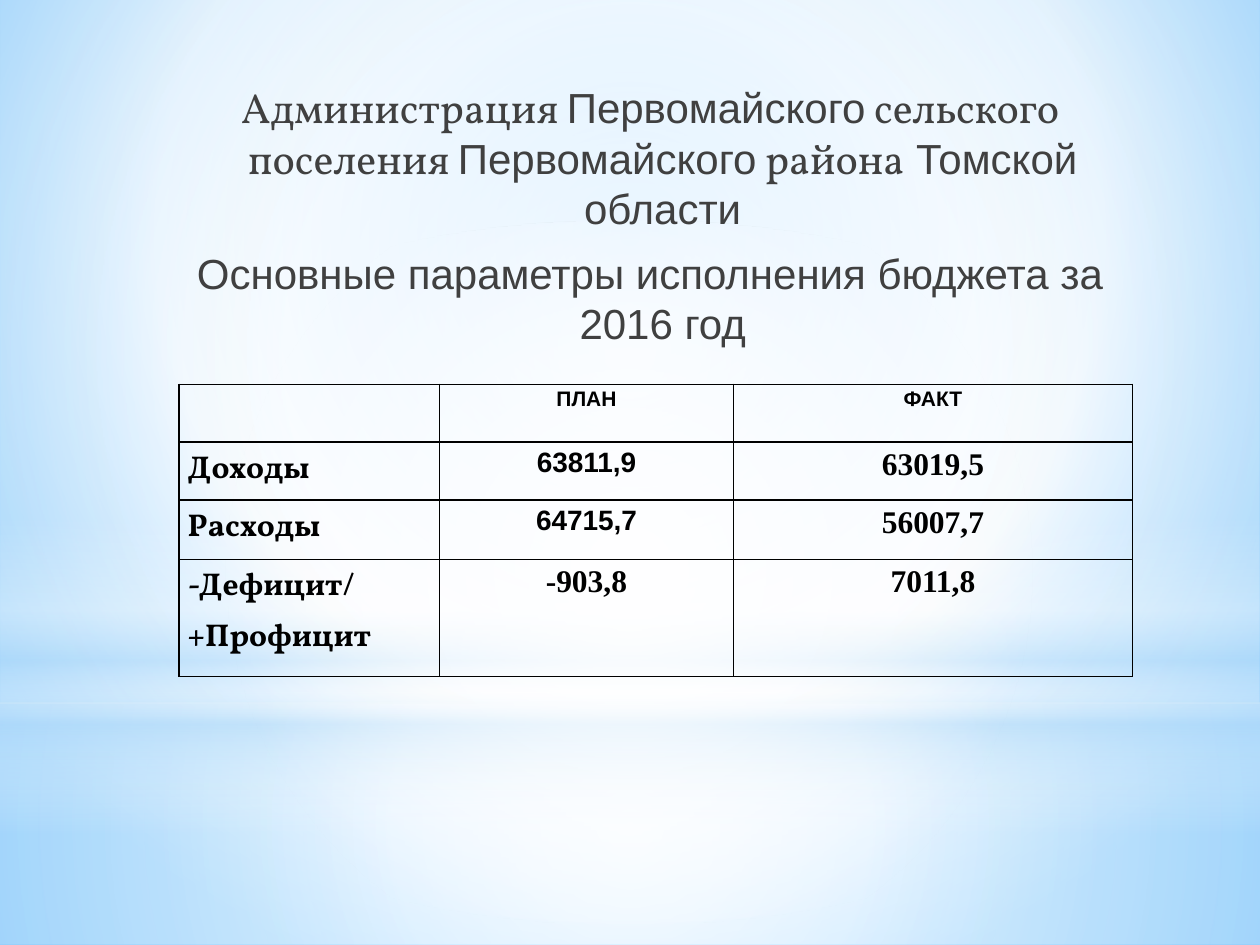
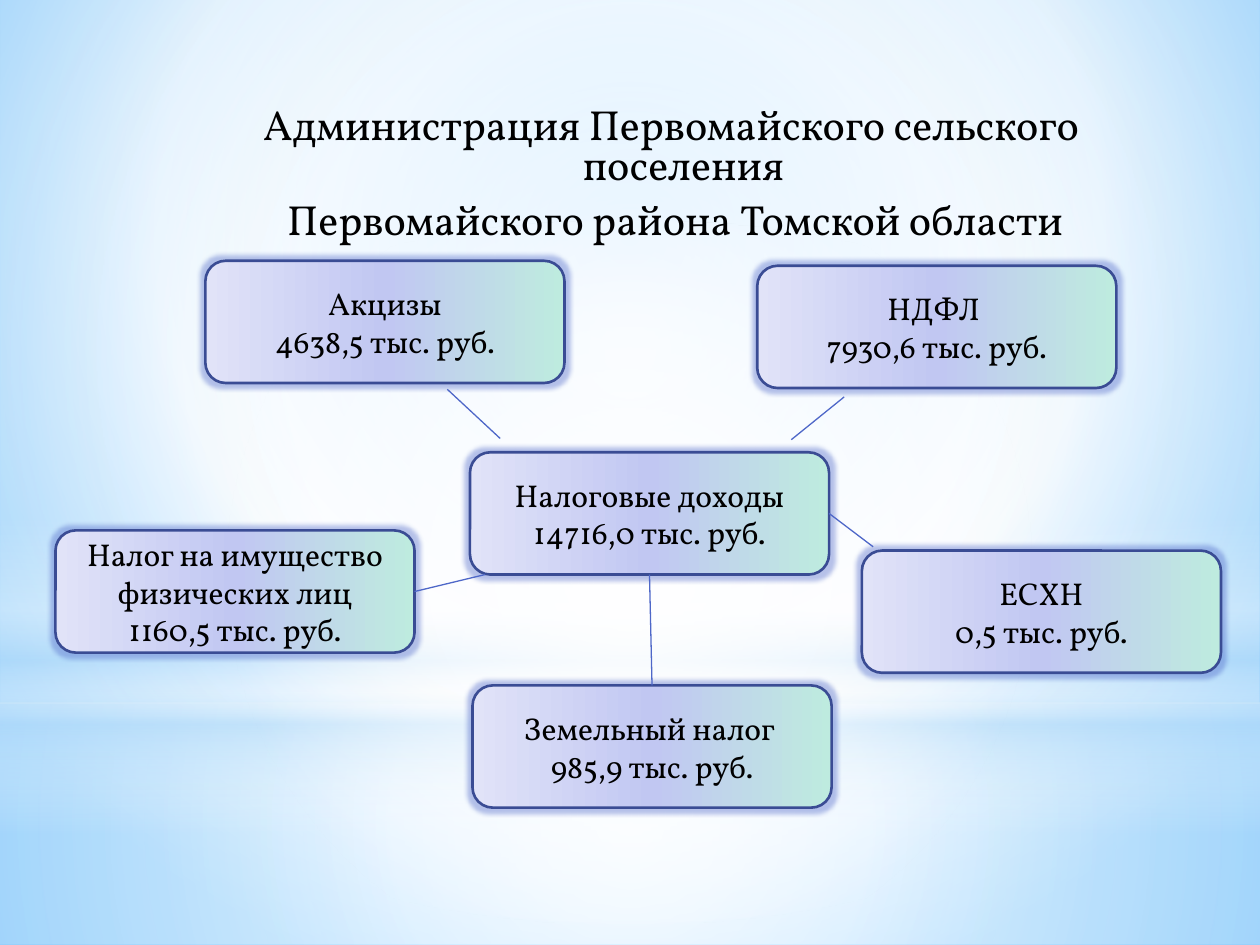
from lxml.etree import SubElement
from pptx import Presentation
from pptx.dml.color import RGBColor
from pptx.enum.shapes import MSO_CONNECTOR, MSO_SHAPE
from pptx.enum.text import MSO_ANCHOR, PP_ALIGN
from pptx.oxml.ns import qn
from pptx.util import Inches, Pt

# Colours
BLACK = RGBColor(0x00, 0x00, 0x00)
WHITE = RGBColor(0xFF, 0xFF, 0xFF)
GREY = RGBColor(0x40, 0x40, 0x40)
SKY = RGBColor(0x9E, 0xD5, 0xFF)
DEEP_SKY = RGBColor(0x5B, 0xB9, 0xFF)
PALE_BLUE = RGBColor(0xB4, 0xDC, 0xFA)
MINT = RGBColor(0xBE, 0xEB, 0xDF)
LILAC = RGBColor(0xC1, 0xC7, 0xF2)
PALE_LILAC = RGBColor(0xE1, 0xE3, 0xF8)
NAVY = RGBColor(0x3A, 0x4C, 0x94)
BLUE = RGBColor(0x4E, 0x67, 0xC8)

# Fonts
SERIF, SANS, TIMES = "Vollkorn", "Arial", "Times New Roman"

BOX_WIDTH, BOX_HEIGHT = 2.85, 0.97
CENTER = (50, 50, 50, 50)

# Gradient stops: position, colour, opacity in percent
BACKGROUND_STOPS = [(0, SKY, 100), (60, WHITE, 100), (100, DEEP_SKY, 100)]
BOX_STOPS = [(0, MINT, 100), (50, LILAC, 100), (100, PALE_LILAC, 100)]
BANDS = [
    (MSO_SHAPE.RECTANGLE, 5.58, 1.92,
     [(0, WHITE, 91), (37, WHITE, 76), (100, PALE_BLUE, 79)], {"focus": CENTER}),
    (MSO_SHAPE.RECTANGLE, 0, 5.58,
     [(0, WHITE, 89), (48, WHITE, 62), (100, PALE_BLUE, 79)], {"focus": CENTER}),
    (MSO_SHAPE.RECTANGLE, 4.12, 2.5,
     [(0, WHITE, 0), (29, WHITE, 30), (45, PALE_BLUE, 40), (55, WHITE, 26),
      (65, PALE_BLUE, 60), (100, WHITE, 0)], {"angle": 90}),
    (MSO_SHAPE.OVAL, 1.75, 5.58,
     [(0, WHITE, 100), (56, WHITE, 0)], {"focus": CENTER}),
]

# Slide content
BUDGET_TITLE = [
    [("Администрация ", SERIF), ("Первомайского", SANS),
     (" сельского поселения ", SERIF), ("Первомайского", SANS),
     (" района", SERIF), (" Томской области", SANS)],
    [("Основные параметры исполнения бюджета за 2016 год", SANS)],
]
BUDGET_COLUMNS = [2.07, 2.33, 3.17]
BUDGET_HEIGHTS = [0.46, 0.46, 0.47, 0.93]
# Each cell: lines, font, size
BUDGET_ROWS = [
    [([""], SANS, 12), (["ПЛАН"], SANS, 12), (["ФАКТ"], SANS, 12)],
    [(["Доходы"], SERIF, 18), (["63811,9"], SANS, 16), (["63019,5"], TIMES, 18)],
    [(["Расходы"], SERIF, 18), (["64715,7"], SANS, 16), (["56007,7"], TIMES, 18)],
    [(["-Дефицит/", "+Профицит"], SERIF, 18), (["-903,8"], TIMES, 18),
     (["7011,8"], TIMES, 18)],
]
TAX_TITLE = ["Администрация Первомайского сельского поселения",
             " Первомайского района Томской области"]
TAXES = {
    "total": (3.73, 3.59, "Налоговые доходы", "14716,0"),
    "excise": (1.63, 2.07, "Акцизы", "4638,5"),
    "income": (6.01, 2.11, "НДФЛ ", "7930,6"),
    "farm": (6.84, 4.37, "ЕСХН", "0,5"),
    "land": (3.75, 5.44, "Земельный налог ", "985,9"),
    "property": (0.44, 4.21, "Налог на имущество физических лиц", "1160,5"),
}


def add_colour(parent, colour, opacity):
    element = SubElement(parent, qn("a:srgbClr"), val=str(colour))
    if opacity < 100:
        SubElement(element, qn("a:alpha"), val=str(opacity * 1000))


def set_gradient(fill, properties, stops, angle=0, focus=None):
    """Fill with a linear gradient, or a circular one when focus is given."""
    fill.solid()
    gradient = SubElement(properties, qn("a:gradFill"), rotWithShape="1")
    stop_list = SubElement(gradient, qn("a:gsLst"))
    for position, colour, opacity in stops:
        stop = SubElement(stop_list, qn("a:gs"), pos=str(position * 1000))
        add_colour(stop, colour, opacity)
    if focus:
        circle = SubElement(gradient, qn("a:path"))
        circle.set("path", "circle")
        SubElement(circle, qn("a:fillToRect"),
                   {side: str(value * 1000) for side, value in zip("ltrb", focus)})
    else:
        SubElement(gradient, qn("a:lin"), ang=str(angle * 60000), scaled="0")
    properties.replace(properties.find(qn("a:solidFill")), gradient)


def write_text(frame, paragraphs, size, font=SERIF, color=BLACK, bold=False,
               align=PP_ALIGN.CENTER, line_spacing=None, title=False):
    """Write paragraphs; each is a string or a list of (text, font) runs."""
    frame.word_wrap = True
    for index, content in enumerate(paragraphs):
        paragraph = frame.paragraphs[0] if index == 0 else frame.add_paragraph()
        paragraph.alignment = align
        if line_spacing:
            paragraph.line_spacing = line_spacing
        if title:
            paragraph.space_before, paragraph.space_after = Pt(5), Pt(3)
            properties = paragraph._p.get_or_add_pPr()
            properties.set("marL", str(Inches(0.25)))
            properties.set("indent", str(Inches(-0.2)))
        runs = [(content, font)] if isinstance(content, str) else content
        for text, run_font in runs:
            run = paragraph.add_run()
            run.text = text
            run.font.name = run_font
            run.font.size = Pt(size)
            run.font.bold = bold
            run.font.color.rgb = color


def add_shape(slide, kind, left, top, width, height, stops, **gradient):
    shape = slide.shapes.add_shape(
        kind, Inches(left), Inches(top), Inches(width), Inches(height))
    shape.shadow.inherit = False
    shape.line.fill.background()
    set_gradient(shape.fill, shape._element.spPr, stops, **gradient)
    return shape


def add_slide(presentation):
    """Add a slide with the shared background and light bands."""
    slide = presentation.slides.add_slide(presentation.slide_layouts[6])
    fill = slide.background.fill
    fill.solid()
    properties = slide.element.find(".//" + qn("p:bgPr"))
    set_gradient(fill, properties, BACKGROUND_STOPS, focus=(20, 10, 20, 60))
    effects = properties.find(qn("a:effectLst"))
    if effects is not None:
        properties.append(effects)
    for kind, top, height, stops, gradient in BANDS:
        add_shape(slide, kind, 0, top, 10, height, stops, **gradient)
    return slide


def add_title(slide, left, top, width, height, paragraphs, **text_format):
    box = slide.shapes.add_textbox(
        Inches(left), Inches(top), Inches(width), Inches(height))
    write_text(box.text_frame, paragraphs, 24, title=True, **text_format)


def set_borders(cell):
    properties = cell._tc.get_or_add_tcPr()
    for side in ("lnL", "lnR", "lnT", "lnB"):
        line = SubElement(properties, qn("a:" + side), w=str(Pt(1)))
        add_colour(SubElement(line, qn("a:solidFill")), BLACK, 100)


def add_budget_table(slide, left, top):
    table = slide.shapes.add_table(
        len(BUDGET_HEIGHTS), len(BUDGET_COLUMNS), Inches(left), Inches(top),
        Inches(sum(BUDGET_COLUMNS)), Inches(sum(BUDGET_HEIGHTS))).table
    table.first_row = table.horz_banding = False
    for column, width in zip(table.columns, BUDGET_COLUMNS):
        column.width = Inches(width)
    for row, height, contents in zip(table.rows, BUDGET_HEIGHTS, BUDGET_ROWS):
        row.height = Inches(height)
        for index, (cell, (lines, font, size)) in enumerate(zip(row.cells, contents)):
            set_borders(cell)
            cell.fill.background()
            cell.margin_left = cell.margin_right = Inches(0.07)
            cell.margin_top = cell.margin_bottom = 0
            write_text(cell.text_frame, lines, size, font=font, bold=True,
                       align=PP_ALIGN.CENTER if index else PP_ALIGN.LEFT,
                       line_spacing=1.15)


def add_tax_box(slide, left, top, name, amount):
    box = add_shape(slide, MSO_SHAPE.ROUNDED_RECTANGLE, left, top,
                    BOX_WIDTH, BOX_HEIGHT, BOX_STOPS, angle=180)
    box.line.color.rgb = NAVY
    box.line.width = Pt(1.5)
    effects = box._element.spPr.find(qn("a:effectLst"))
    glow = SubElement(effects, qn("a:glow"), rad=str(Pt(5)))
    add_colour(glow, BLUE, 40)
    box.text_frame.vertical_anchor = MSO_ANCHOR.MIDDLE
    write_text(box.text_frame, [name, f"{amount} тыс. руб."], 18)
    return box


def add_line(slide, start, end, begin=None, finish=None):
    """Draw a line; begin and finish are (box, side) pairs to join."""
    line = slide.shapes.add_connector(
        MSO_CONNECTOR.STRAIGHT, *(Inches(value) for value in start + end))
    line.line.color.rgb = BLUE
    line.line.width = Pt(0.75)
    SubElement(line._element.spPr, qn("a:effectLst"))
    if begin:
        line.begin_connect(*begin)
    if finish:
        line.end_connect(*finish)


def build_budget_slide(presentation):
    slide = add_slide(presentation)
    add_title(slide, 1.37, 0.6, 7.53, 1.02, BUDGET_TITLE, color=GREY)
    add_budget_table(slide, 1.42, 3.05)


def build_tax_slide(presentation):
    slide = add_slide(presentation)
    add_title(slide, 1.52, 0.81, 7.56, 0.82, TAX_TITLE, line_spacing=0.8)
    boxes = {key: add_tax_box(slide, *tax) for key, tax in TAXES.items()}
    total = boxes["total"]
    add_line(slide, (3.55, 3.09), (3.97, 3.48))
    add_line(slide, (6.7, 3.15), (6.28, 3.49))
    add_line(slide, (3.28, 4.7), (3.85, 4.56), begin=(boxes["property"], 3))
    add_line(slide, (5.17, 5.44), (5.15, 4.56),
             begin=(boxes["land"], 0), finish=(total, 2))
    add_line(slide, (6.58, 4.08), (6.93, 4.34), begin=(total, 3))


def main():
    presentation = Presentation()
    presentation.slide_width = Inches(10)
    presentation.slide_height = Inches(7.5)
    build_budget_slide(presentation)
    build_tax_slide(presentation)
    presentation.save("out.pptx")


if __name__ == "__main__":
    main()
